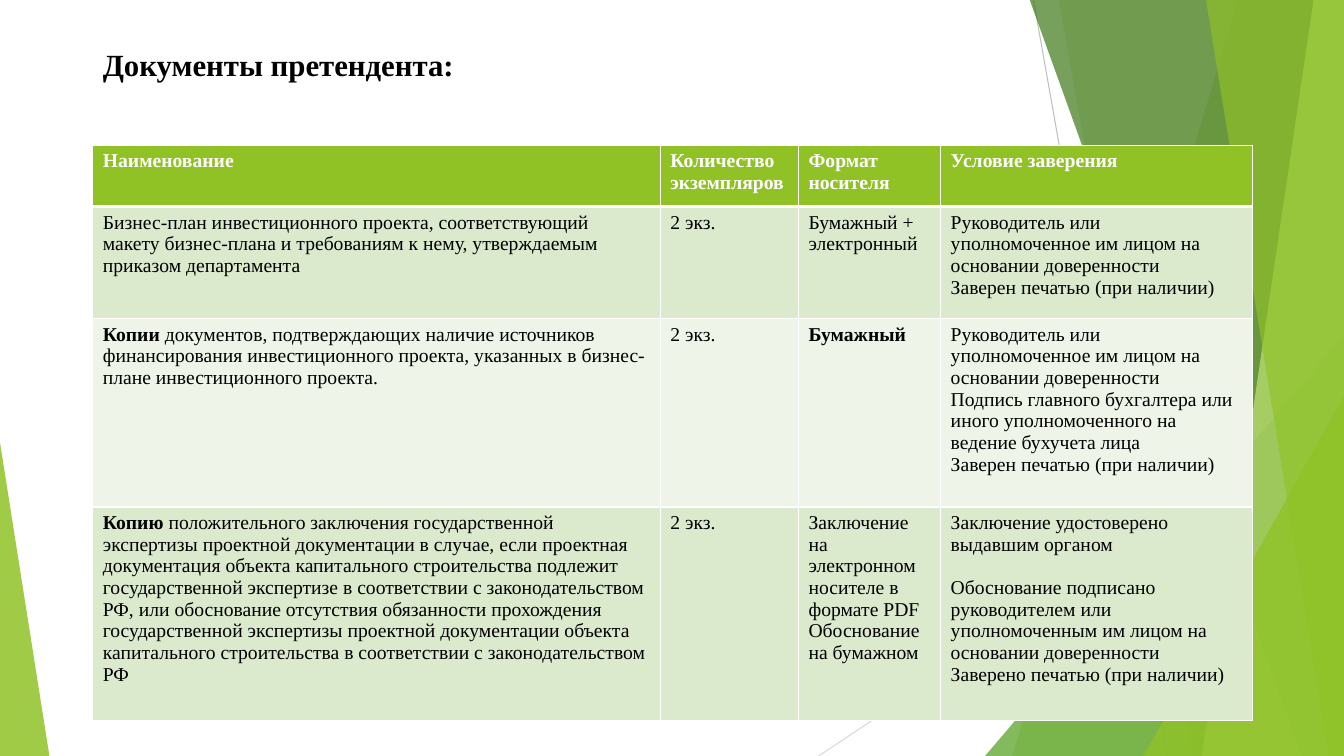
from pptx import Presentation
from pptx.dml.color import RGBColor
from pptx.enum.shapes import MSO_CONNECTOR as CONNECTOR, MSO_SHAPE as SHAPE
from pptx.enum.text import MSO_ANCHOR as ANCHOR, MSO_AUTO_SIZE as AUTO_SIZE, PP_ALIGN as ALIGN
from pptx.oxml.ns import qn
from pptx.util import Pt
from lxml.etree import SubElement

PX = 9144
FONT = "Times New Roman"
GREEN, WHITE, BLACK = "90C226", "FFFFFF", "000000"


def paint(fill, color, opacity=100):
    fill.solid()
    fill.fore_color.rgb = RGBColor.from_string(color)
    if opacity < 100:
        rgb = fill._xPr.find(".//" + qn("a:srgbClr"))
        SubElement(rgb, qn("a:alpha"), val=str(opacity * 1000))


def style(run, size, color, bold):
    run.font.name = FONT
    run.font.size = Pt(size)
    run.font.bold = bold
    paint(run.font.fill, color)


deck = Presentation()
deck.slide_width, deck.slide_height = 1333 * PX, 750 * PX
slide = deck.slides.add_slide(deck.slide_layouts[5])
shapes = slide.shapes

rays = [((1025, 0, 1158, 750), "BFBFBF"), ((1333, 403, 812, 750), "D9D9D9")]
for ends, color in rays:
    ray = shapes.add_connector(CONNECTOR.STRAIGHT, *[end * PX for end in ends])
    ray.line.width = Pt(0.75)
    paint(ray.line.fill, color)
    SubElement(ray._element.spPr, qn("a:effectLst"))

facets = [
    ("band", (1228, 1004), GREEN, 30),
    ("band", (1050, 1183), GREEN, 20),
    ("triangle", (977, 333, 356, 417, 1), "54A021", 72),
    ("band", (1021, 1291), "3F7819", 70),
    ("band", (1303, 1192), "C0E474", 70),
    ("band", (1196, 1318), GREEN, 65),
    ("triangle", (1134, 393, 199, 357, 1), GREEN, 80),
    ("triangle", (0, 439, 49, 311, 0), GREEN, 85),
]
for kind, place, color, opacity in facets:
    if kind == "band":
        top_x, bottom_x = place
        outline = shapes.build_freeform(top_x, -1, scale=PX)
        outline.add_line_segments([(1333, -1), (1333, 750), (bottom_x, 750)], close=True)
        facet = outline.convert_to_shape()
    else:
        *box, apex = place
        facet = shapes.add_shape(SHAPE.ISOSCELES_TRIANGLE, *[side * PX for side in box])
        facet.adjustments[0] = apex
    facet.shadow.inherit = False
    facet.line.fill.background()
    paint(facet.fill, color, opacity)

heading = shapes.title
heading.left, heading.top, heading.width, heading.height = [side * PX for side in (92, 40, 1150, 80)]
heading.text_frame.text = "Документы претендента:"
heading.text_frame.auto_size = AUTO_SIZE.NONE
heading.text_frame.vertical_anchor = ANCHOR.TOP
heading.text_frame.paragraphs[0].alignment = ALIGN.LEFT
style(heading.text_frame.paragraphs[0].runs[0], 22, BLACK, True)

director = "Руководитель или уполномоченное им лицом на основании доверенности"
stamp = "Заверен печатью (при наличии)"
documents = [
    ("Наименование", "Количество экземпляров", "Формат носителя", "Условие заверения"),
    (
        "Бизнес-план инвестиционного проекта, соответствующий макету бизнес-плана "
        "и требованиям к нему, утверждаемым приказом департамента",
        "2 экз.",
        "Бумажный + электронный",
        f"{director}\n{stamp}",
    ),
    (
        "Копии документов, подтверждающих наличие источников финансирования "
        "инвестиционного проекта, указанных в бизнес-плане инвестиционного проекта.",
        "2 экз.",
        "Бумажный",
        f"{director}\nПодпись главного бухгалтера или иного уполномоченного "
        f"на ведение бухучета лица\n{stamp}",
    ),
    (
        "Копию положительного заключения государственной экспертизы проектной документации "
        "в случае, если проектная документация объекта капитального строительства подлежит "
        "государственной экспертизе в соответствии с законодательством РФ, или обоснование "
        "отсутствия обязанности прохождения государственной экспертизы проектной документации "
        "объекта капитального строительства в соответствии с законодательством РФ",
        "2 экз.",
        "Заключение на электронном носителе в формате PDF\nОбоснование на бумажном",
        "Заключение удостоверено выдавшим органом\n"
        "Обоснование подписано руководителем или уполномоченным им лицом "
        "на основании доверенности\nЗаверено печатью (при наличии)",
    ),
]
widths = [563, 137, 141, 309]
heights = [61, 111, 187, 212]
row_fills = [GREEN, "DBE9CD", "EEF4E8", "DBE9CD"]

register = shapes.add_table(
    len(heights), len(widths), 92 * PX, 144 * PX, sum(widths) * PX, sum(heights) * PX
).table
for column, width in zip(register.columns, widths):
    column.width = width * PX
for row, height in zip(register.rows, heights):
    row.height = height * PX

for r, entries in enumerate(documents):
    for c, entry in enumerate(entries):
        cell = register.cell(r, c)
        cell.text_frame.text = entry
        lead, _, rest = entry.partition(" ")
        if lead in ("Копии", "Копию"):
            opening = cell.text_frame.paragraphs[0]
            opening.runs[0].text = lead
            opening.add_run().text = " " + rest
        for paragraph in cell.text_frame.paragraphs:
            for run in paragraph.runs:
                style(run, 14, BLACK if r else WHITE, r == 0 or run.text == lead)
        borders = cell._tc.get_or_add_tcPr()
        for side in "LRTB":
            thick = (r, side) in ((0, "B"), (1, "T"))
            edge = SubElement(borders, qn(f"a:ln{side}"), w=str(Pt(3 if thick else 1)))
            SubElement(SubElement(edge, qn("a:solidFill")), qn("a:srgbClr"), val=WHITE)
        paint(cell.fill, row_fills[r])

register.cell(3, 3).text_frame.paragraphs[1].space_before = Pt(15.5)

deck.save("out.pptx")
